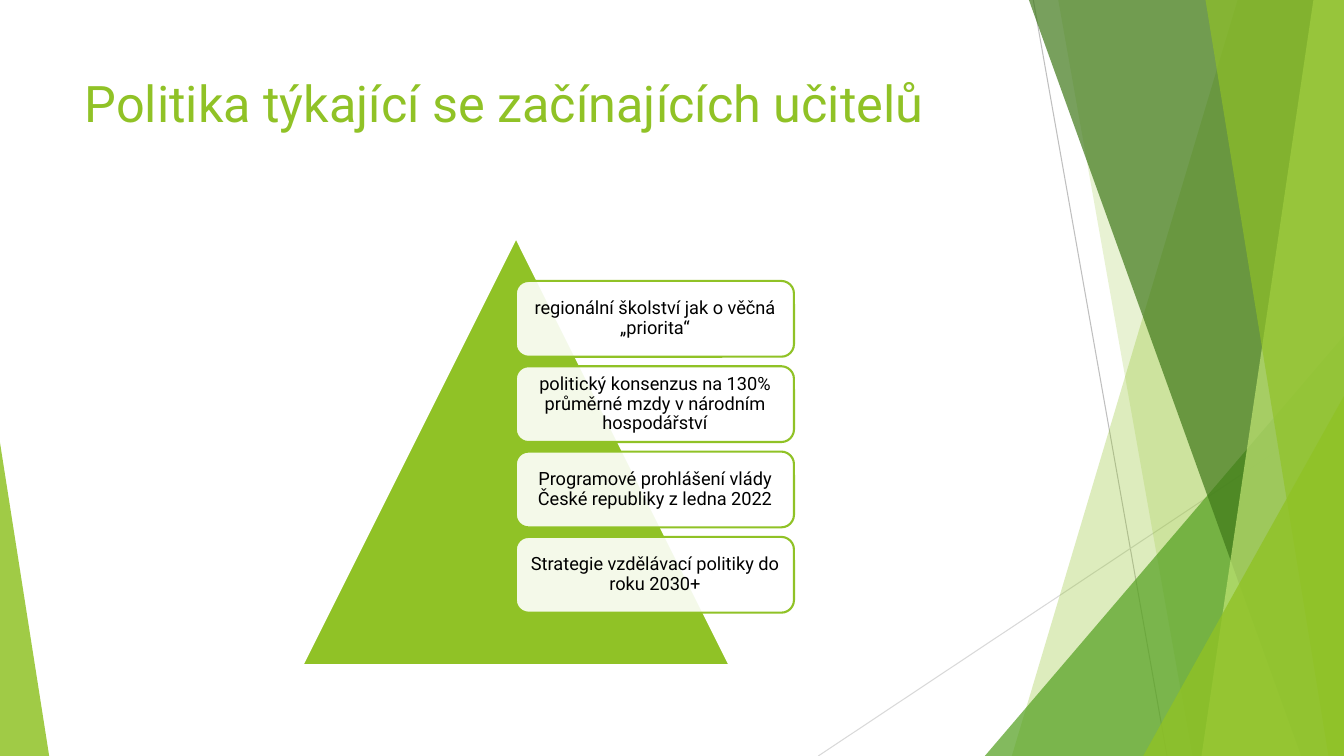
from lxml.etree import SubElement
from pptx import Presentation
from pptx.dml.color import RGBColor
from pptx.enum.shapes import MSO_CONNECTOR as Connector, MSO_SHAPE as Shape
from pptx.enum.text import MSO_ANCHOR as Anchor, MSO_AUTO_SIZE as AutoSize, PP_ALIGN as Align
from pptx.oxml.ns import qn
from pptx.util import Cm, Pt

WHITE = RGBColor(0xFF, 0xFF, 0xFF)
BLACK = RGBColor(0x00, 0x00, 0x00)
GREEN = RGBColor(0x90, 0xC2, 0x26)
LEAF = RGBColor(0x54, 0xA0, 0x21)
FOREST = RGBColor(0x3F, 0x78, 0x19)
LIME = RGBColor(0xC0, 0xE4, 0x74)
GREY = RGBColor(0xBF, 0xBF, 0xBF)
PALE_GREY = RGBColor(0xD9, 0xD9, 0xD9)
FONT = "Roboto"
WIDTH, HEIGHT = 33.87, 19.05


def paint(shape, color, opacity=100, outline=None):
    """Fill a shape, with an optional 1.5 pt outline."""
    shape.shadow.inherit = False
    shape.fill.solid()
    shape.fill.fore_color.rgb = color
    if opacity < 100:
        color_node = shape.element.spPr.find(qn("a:solidFill"))[0]
        SubElement(color_node, qn("a:alpha"), val=str(opacity * 1000))
    if outline is None:
        shape.line.fill.background()
    else:
        shape.line.color.rgb = outline
        shape.line.width = Pt(1.5)


def write(shape, text, frame_format, para_format, font_format, color):
    """Put one formatted paragraph into a shape."""
    frame = shape.text_frame
    para = frame.paragraphs[0]
    span = para.add_run()
    span.text = text
    for target, values in ((frame, frame_format), (para, para_format), (span.font, font_format)):
        for name, value in values.items():
            setattr(target, name, value)
    span.font.color.rgb = color


deck = Presentation()
deck.slide_width, deck.slide_height = Cm(WIDTH), Cm(HEIGHT)
page = deck.slides.add_slide(deck.slide_layouts[5])
shapes = page.shapes

# Thin lines behind the facets
for x1, y1, x2, y2, color in (
    (26.04, 0, 29.41, HEIGHT, GREY),
    (WIDTH, 10.24, 20.62, HEIGHT, PALE_GREY),
):
    line = shapes.add_connector(Connector.STRAIGHT, Cm(x1), Cm(y1), Cm(x2), Cm(y2))
    line.line.color.rgb = color
    line.line.width = Pt(0.75)
    SubElement(line.element.spPr, qn("a:effectLst"))

# Green facets: bands give top and bottom x of their slanted left edge,
# corners give left, top, width and the apex position
facets = (
    ("band", (31.19, 25.5), GREEN, 30),
    ("band", (26.67, 30.05), GREEN, 20),
    ("corner", (24.82, 8.46, 9.05, 1), LEAF, 72),
    ("band", (25.93, 32.79), FOREST, 70),
    ("band", (33.1, 30.28), LIME, 70),
    ("band", (30.38, 33.48), GREEN, 65),
    ("corner", (28.81, 9.98, 5.06, 1), GREEN, 80),
    ("corner", (0, 11.15, 1.24, 0), GREEN, 85),
)
for kind, place, color, opacity in facets:
    if kind == "band":
        top_x, bottom_x = place
        outline = shapes.build_freeform(Cm(top_x), 0)
        outline.add_line_segments(
            [(Cm(WIDTH), 0), (Cm(WIDTH), Cm(HEIGHT)), (Cm(bottom_x), Cm(HEIGHT))]
        )
        facet = outline.convert_to_shape()
    else:
        left, top, width, apex = place
        facet = shapes.add_shape(
            Shape.ISOSCELES_TRIANGLE, Cm(left), Cm(top), Cm(width), Cm(HEIGHT - top)
        )
        facet.adjustments[0] = apex
    paint(facet, color, opacity)

# Title
title = shapes.title
title.left, title.top, title.width, title.height = Cm(1.88), Cm(1.7), Cm(23.88), Cm(3.66)
write(
    title,
    "Politika týkající se začínajících učitelů",
    {"vertical_anchor": Anchor.TOP, "word_wrap": True, "auto_size": AutoSize.NONE},
    {"alignment": Align.LEFT},
    {"name": FONT, "size": Pt(36)},
    GREEN,
)

# Pyramid
pyramid = shapes.add_shape(Shape.ISOSCELES_TRIANGLE, Cm(7.62), Cm(5.99), Cm(10.77), Cm(10.77))
paint(pyramid, GREEN, outline=WHITE)

# Cards stacked over the right half of the pyramid
cards = (
    "regionální školství jak o věčná „priorita“",
    "politický konsenzus na 130% průměrné mzdy v národním hospodářství",
    "Programové prohlášení vlády České republiky z ledna 2022",
    "Strategie vzdělávací politiky do roku 2030+",
)
margins = {f"margin_{side}": Cm(0.22) for side in ("left", "top", "right", "bottom")}
for index, text in enumerate(cards):
    card = shapes.add_shape(
        Shape.ROUNDED_RECTANGLE, Cm(13), Cm(7.08 + 2.15 * index), Cm(7.01), Cm(1.91)
    )
    paint(card, WHITE, 90, GREEN)
    write(
        card,
        text,
        {"vertical_anchor": Anchor.MIDDLE, "word_wrap": True, **margins},
        {"alignment": Align.CENTER, "line_spacing": 0.9},
        {"name": FONT, "size": Pt(13)},
        BLACK,
    )

deck.save("out.pptx")
